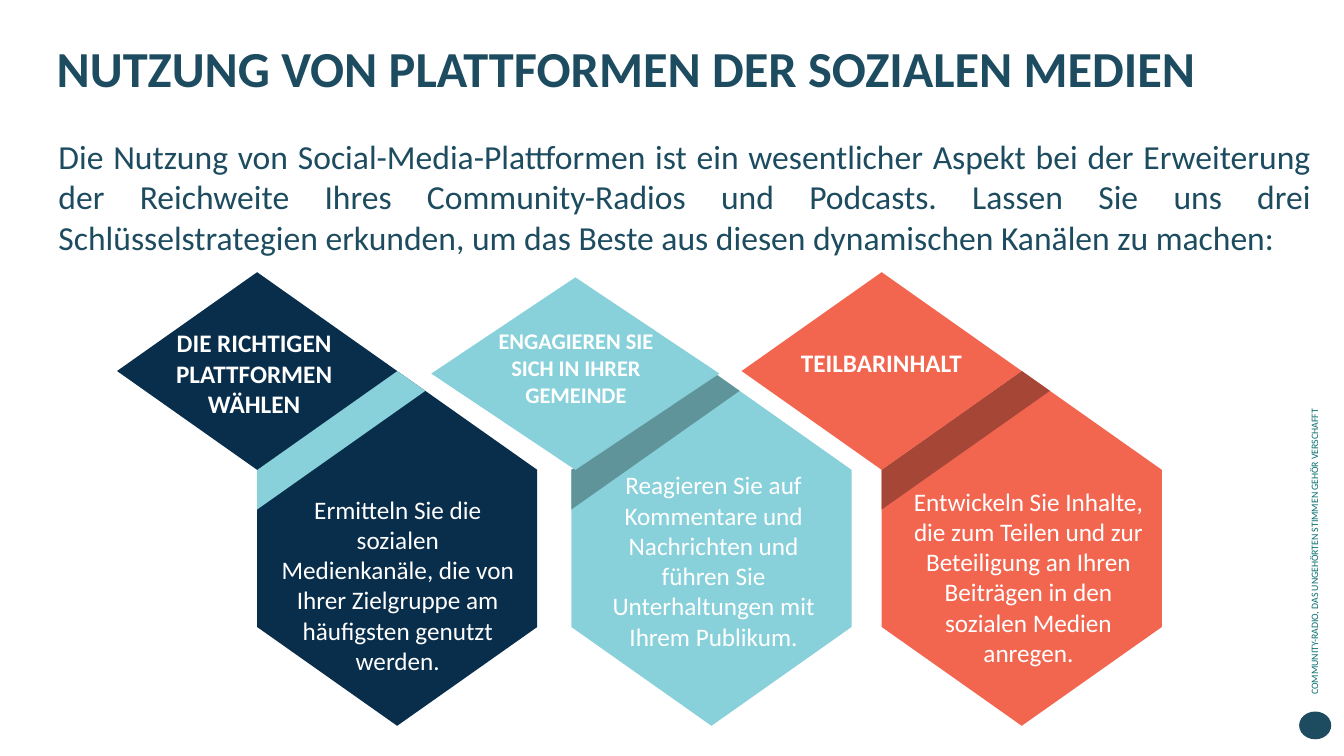
import dataclasses

import lxml.etree
import pptx
import pptx.dml.color
import pptx.enum.shapes
import pptx.enum.text
import pptx.oxml.ns
import pptx.util

Cm = pptx.util.Cm
ALIGN = pptx.enum.text.PP_ALIGN
PRESET = pptx.enum.shapes.MSO_SHAPE


@dataclasses.dataclass(frozen=True)
class Theme:
    """Colours and type sizes of the slide."""
    font: str = "Calibri"
    petrol: str = "1D4C60"
    teal: str = "066C6D"
    navy: str = "092E4B"
    aqua: str = "88D1DA"
    aqua_shade: str = "60949B"
    coral: str = "F26650"
    coral_shade: str = "A54637"
    white: str = "FFFFFF"
    title_size: int = 36
    intro_size: int = 24
    text_size: int = 18
    small_heading_size: int = 16
    motto_size: int = 7


@dataclasses.dataclass(frozen=True)
class Strategy:
    """Content of one card; boxes are in cm relative to the card."""
    left: float
    color: str
    fold_color: str
    diamond_box: tuple
    heading: str
    heading_size: int
    heading_box: tuple
    advice: str
    advice_box: tuple


THEME = Theme()
CARD_TOP = 6.86
HALF_WIDTH = 3.53
HALF_HEIGHT = 2.49
HEXAGON_SIDE = 3.96

STRATEGIES = (
    Strategy(2.95, THEME.navy, THEME.aqua, (0, 0, 7.06, 4.98),
             "DIE RICHTIGEN PLATTFORMEN WÄHLEN", THEME.text_size,
             (1.04, 1.27, 4.83, 2.57),
             "Ermitteln Sie die sozialen Medienkanäle, die von Ihrer "
             "Zielgruppe am häufigsten genutzt werden.",
             (3.86, 5.46, 6.43, 4.65)),
    Strategy(10.87, THEME.aqua, THEME.aqua_shade, (0, 0.13, 7.26, 4.85),
             "ENGAGIEREN SIE SICH IN IHRER GEMEINDE", THEME.small_heading_size,
             (1.09, 1.27, 5.11, 2.31),
             "Reagieren Sie auf Kommentare und Nachrichten und führen Sie "
             "Unterhaltungen mit Ihrem Publikum.",
             (3.99, 4.85, 6.25, 4.65)),
    Strategy(18.69, THEME.coral, THEME.coral_shade, (0, 0, 7.06, 4.98),
             "TEILBARINHALT", THEME.text_size, (-1.63, 1.78, 10.31, 1.02),
             "Entwickeln Sie Inhalte, die zum Teilen und zur Beteiligung an "
             "Ihren Beiträgen in den sozialen Medien anregen.",
             (4.04, 5.26, 6.38, 4.65)),
)


def place(shape, left, top, width, height):
    """Move and size a shape in cm."""
    shape.left, shape.top = Cm(left), Cm(top)
    shape.width, shape.height = Cm(width), Cm(height)


def paint(shape, color):
    """Fill a shape flat, without outline or shadow."""
    shape.shadow.inherit = False
    shape.fill.solid()
    shape.fill.fore_color.rgb = pptx.dml.color.RGBColor.from_string(color)
    shape.line.fill.background()


def write(shape, wording, size, color, align, bold=False):
    """Set one paragraph of top-anchored text and return it."""
    frame = shape.text_frame
    frame.word_wrap = True
    frame.auto_size = pptx.enum.text.MSO_AUTO_SIZE.NONE
    frame.vertical_anchor = pptx.enum.text.MSO_ANCHOR.TOP
    paragraph = frame.paragraphs[0]
    paragraph.text = wording
    paragraph.alignment = align
    paragraph.space_before = pptx.util.Pt(0)
    paragraph.font.name = THEME.font
    paragraph.font.size = pptx.util.Pt(size)
    paragraph.font.bold = bold
    paragraph.font.color.rgb = pptx.dml.color.RGBColor.from_string(color)
    return paragraph


def add_text(slide, box, *style, **options):
    """Add a text box with one paragraph."""
    label = slide.shapes.add_textbox(*map(Cm, box))
    write(label, *style, **options)
    return label


def add_outline(slide, left, top, points, color):
    """Draw a filled polygon from points relative to left and top."""
    corners = [(Cm(left + x), Cm(top + y)) for x, y in points]
    builder = slide.shapes.build_freeform(*corners[0])
    builder.add_line_segments(corners[1:], close=True)
    paint(builder.convert_to_shape(), color)


def add_header(slide, left, top, width):
    """Fill the title and the introduction below it."""
    title = slide.shapes.title
    place(title, left, top, width - 1.97, 2.77)
    write(title, "NUTZUNG VON PLATTFORMEN DER SOZIALEN MEDIEN",
          THEME.title_size, THEME.petrol, ALIGN.CENTER, bold=True)

    intro = slide.placeholders[1]
    place(intro, left + 0.84, top + 2.49, width - 0.7, 3.33)
    paragraph = write(
        intro,
        "Die Nutzung von Social-Media-Plattformen ist ein wesentlicher Aspekt "
        "bei der Erweiterung der Reichweite Ihres Community-Radios und "
        "Podcasts. Lassen Sie uns drei Schlüsselstrategien erkunden, um das "
        "Beste aus diesen dynamischen Kanälen zu machen:",
        THEME.intro_size, THEME.petrol, ALIGN.JUSTIFY)
    properties = paragraph._p.get_or_add_pPr()
    properties.set("marL", "0")
    properties.set("indent", "0")
    no_bullet = lxml.etree.Element(pptx.oxml.ns.qn("a:buNone"))
    properties.find(pptx.oxml.ns.qn("a:defRPr")).addprevious(no_bullet)


def add_card(slide, strategy, top):
    """Draw a hexagon with its fold, diamond, heading and advice."""
    left = strategy.left
    near, middle, far = (HALF_WIDTH * step for step in (1, 2, 3))
    shoulder = 2 * HALF_HEIGHT
    foot = shoulder + HEXAGON_SIDE
    hexagon = ((middle, HALF_HEIGHT), (near, shoulder), (near, foot),
               (middle, foot + HALF_HEIGHT), (far, foot), (far, shoulder))
    fold = ((middle, HALF_HEIGHT), (near, shoulder), (near, shoulder + 1),
            (middle + 0.71, HALF_HEIGHT + 0.5))
    add_outline(slide, left, top, hexagon, strategy.color)
    add_outline(slide, left, top, fold, strategy.fold_color)

    def within(box):
        """Shift a relative box onto the slide."""
        return left + box[0], top + box[1], box[2], box[3]

    diamond = slide.shapes.add_shape(
        PRESET.DIAMOND, *map(Cm, within(strategy.diamond_box)))
    paint(diamond, strategy.color)
    add_text(slide, within(strategy.heading_box), strategy.heading,
             strategy.heading_size, THEME.white, ALIGN.CENTER, bold=True)
    add_text(slide, within(strategy.advice_box), strategy.advice,
             THEME.text_size, THEME.white, ALIGN.CENTER)


def add_margin(slide, left, top):
    """Set the upright motto above a round mark."""
    motto = add_text(slide, (left - 5.28, top - 6.12, 11.33, 0.56),
                     "COMMUNITY-RADIO, DAS UNGEHÖRTEN STIMMEN GEHÖR VERSCHAFFT",
                     THEME.motto_size, THEME.teal, ALIGN.LEFT)
    motto.rotation = 270
    mark = slide.shapes.add_shape(
        PRESET.OVAL, Cm(left), Cm(top), Cm(0.81), Cm(0.7))
    paint(mark, THEME.petrol)


def main():
    """Build and save the slide."""
    deck = pptx.Presentation()
    deck.slide_width, deck.slide_height = Cm(33.87), Cm(19.05)
    slide = deck.slides.add_slide(deck.slide_layouts[1])
    add_header(slide, 0.38, 0.81, 32.78)
    for strategy in STRATEGIES:
        add_card(slide, strategy, CARD_TOP)
    add_margin(slide, 32.74, 17.93)
    deck.save("out.pptx")


if __name__ == "__main__":
    main()
